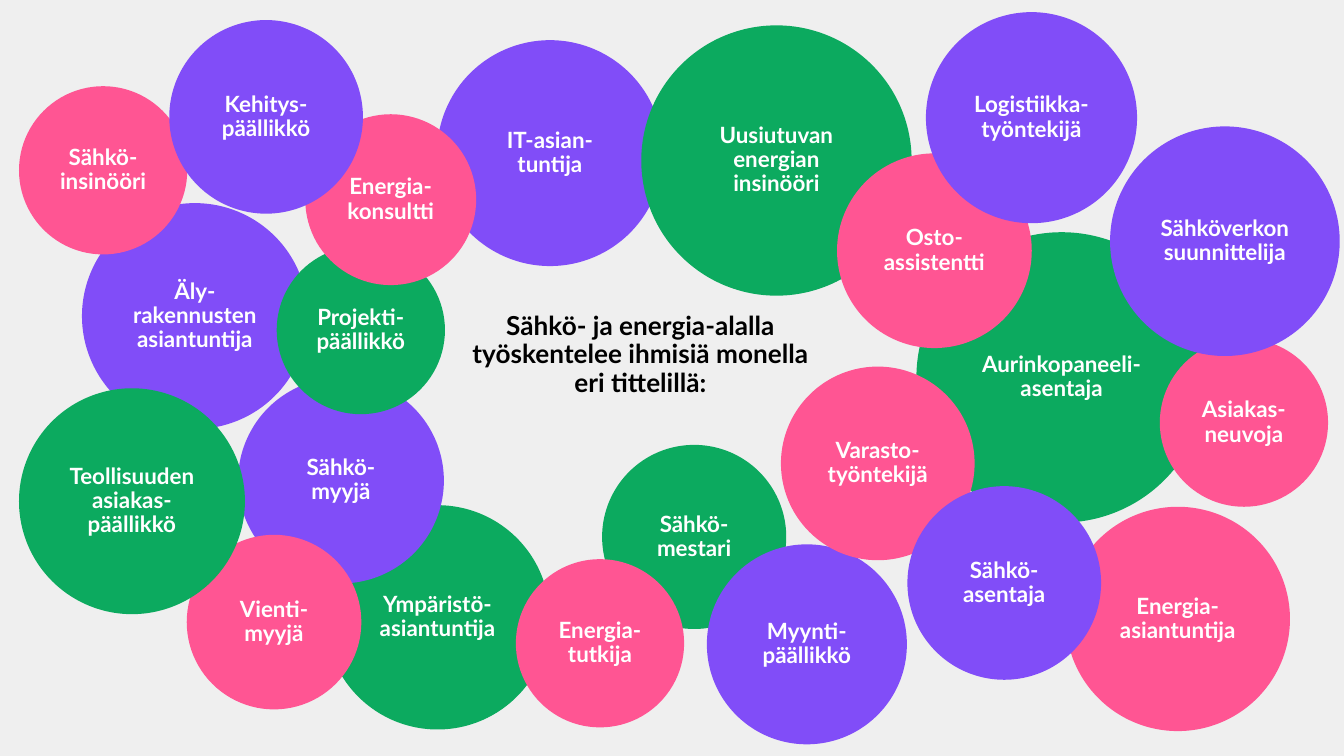
from typing import NamedTuple

from pptx import Presentation
from pptx.dml.color import RGBColor
from pptx.enum.shapes import MSO_SHAPE
from pptx.enum.text import MSO_ANCHOR, PP_ALIGN
from pptx.util import Cm, Pt

GREEN, VIOLET, PINK = "0CAA5F", "814DF8", "FF5593"


class Bubble(NamedTuple):
    """A round job title, with lengths in centimetres."""
    left: float
    top: float
    diameter: float
    color: str
    title: str


BUBBLES = [
    Bubble(20.14, 9.58, 4.24, PINK, "Energia-\nasiantuntija"),
    Bubble(17.32, 4.39, 5.49, GREEN, "Aurinkopaneeli-asentaja"),
    Bubble(6.15, 9.55, 4.24, GREEN, "Ympäristö-\nasiantuntija"),
    Bubble(1.55, 3.84, 4.27, VIOLET, "Äly- rakennusten asiantuntija"),
    Bubble(4.5, 7.14, 3.89, VIOLET, "Sähkö-\nmyyjä"),
    Bubble(0.36, 1.63, 3.18, PINK, "Sähkö-\ninsinööri"),
    Bubble(3.53, 10.11, 3.3, PINK, "Vienti-\nmyyjä"),
    Bubble(5.23, 4.65, 3.18, GREEN, "Projekti-\npäällikkö"),
    Bubble(8.26, 0.76, 4.27, VIOLET, "IT-asian-\ntuntija"),
    Bubble(11.38, 8.41, 3.48, GREEN, "Sähkö-\nmestari"),
    Bubble(5.77, 2.16, 3.23, PINK, "Energia-\nkonsultti"),
    Bubble(12.12, 0.48, 5.11, GREEN, "Uusiutuvan energian insinööri"),
    Bubble(13.36, 10.29, 3.78, VIOLET, "Myynti-\npäällikkö"),
    Bubble(15.82, 2.9, 3.68, PINK, "Osto-\nassistentti"),
    Bubble(14.76, 6.93, 3.66, PINK, "Varasto-\ntyöntekijä"),
    Bubble(17.15, 9.19, 3.66, VIOLET, "Sähkö-\nasentaja"),
    Bubble(17.5, 0.23, 3.99, VIOLET, "Logistiikka-työntekijä"),
    Bubble(21.92, 6.4, 3.18, PINK, "Asiakas-\nneuvoja"),
    Bubble(20.98, 2.39, 4.34, VIOLET, "Sähköverkon suunnittelija"),
    Bubble(0.36, 7.34, 4.27, GREEN, "Teollisuuden asiakas-\npäällikkö"),
    Bubble(3.2, 0.38, 3.66, VIOLET, "Kehitys-\npäällikkö"),
    Bubble(9.75, 10.57, 3.18, PINK, "Energia-\ntutkija"),
]


def paint(fill, color: str) -> None:
    """Make a fill solid in a hex colour."""
    fill.solid()
    fill.fore_color.rgb = RGBColor.from_string(color)


def write(shape, text: str, size: int, color: str, anchor: MSO_ANCHOR) -> None:
    """Write centred bold text, one run per given line."""
    frame = shape.text_frame
    frame.word_wrap = True
    frame.vertical_anchor = anchor
    frame.margin_left = frame.margin_right = Cm(0.19)
    frame.margin_top = frame.margin_bottom = Cm(0.1)
    paragraph = frame.paragraphs[0]
    paragraph.alignment = PP_ALIGN.CENTER
    paragraph.line_spacing = 0.9
    for index, line in enumerate(text.split("\n")):
        if index:
            paragraph.add_line_break()
        run = paragraph.add_run()
        run.text = line
        run.font.name = "Lato"
        run.font.size = Pt(size)
        run.font.bold = True
        paint(run.font.fill, color)


def draw_bubble(slide, bubble: Bubble) -> None:
    """Draw one job title in its circle."""
    diameter = Cm(bubble.diameter)
    shape = slide.shapes.add_shape(
        MSO_SHAPE.OVAL, Cm(bubble.left), Cm(bubble.top), diameter, diameter)
    shape.shadow.inherit = False
    paint(shape.fill, bubble.color)
    shape.line.fill.background()
    write(shape, bubble.title, 12, "FFFFFF", MSO_ANCHOR.MIDDLE)


def main() -> None:
    """Build and save the slide of job titles."""
    presentation = Presentation()
    presentation.slide_width, presentation.slide_height = Cm(25.4), Cm(14.29)
    slide = presentation.slides.add_slide(presentation.slide_layouts[6])
    paint(slide.background.fill, "EFEFEF")
    for bubble in BUBBLES:
        draw_bubble(slide, bubble)
    heading = slide.shapes.add_textbox(Cm(8.64), Cm(5.82), Cm(6.93), Cm(1.8))
    write(heading, "Sähkö- ja energia-alalla työskentelee ihmisiä monella eri tittelillä:",
          14, "000000", MSO_ANCHOR.TOP)
    presentation.save("out.pptx")


if __name__ == "__main__":
    main()
